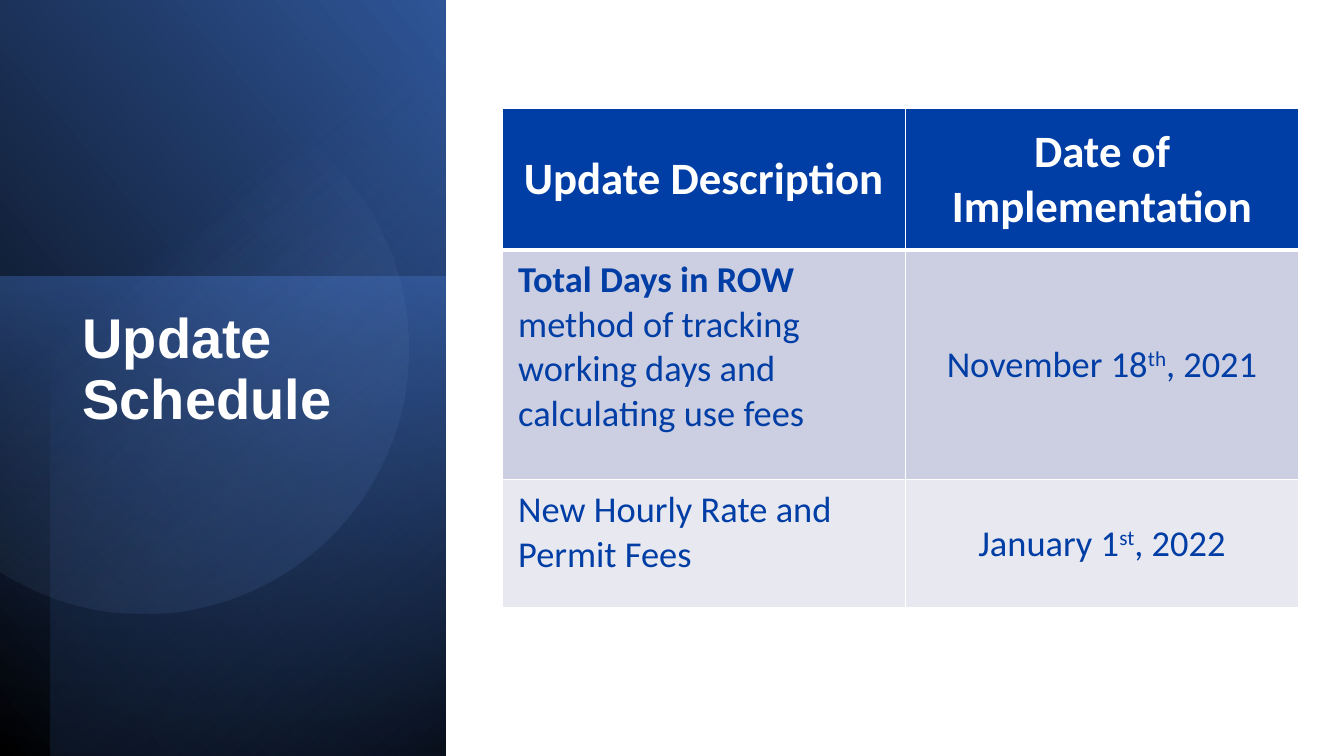
import dataclasses
import math

import lxml.etree
import pptx
import pptx.dml.color
import pptx.enum.shapes
import pptx.enum.text
import pptx.oxml
import pptx.oxml.ns
import pptx.util

Inches = pptx.util.Inches
Pt = pptx.util.Pt
RGBColor = pptx.dml.color.RGBColor
qn = pptx.oxml.ns.qn
CENTER = pptx.enum.text.PP_ALIGN.CENTER
LEFT = pptx.enum.text.PP_ALIGN.LEFT


@dataclasses.dataclass(frozen=True)
class Theme:
    white: str = "FFFFFF"
    black: str = "000000"
    royal: str = "003DA5"
    accent: str = "4472C4"
    accent_dark: str = "2F5597"
    accent_darkest: str = "203864"
    accent_light: str = "8FAADC"
    row_fills: tuple[str, ...] = ("003DA5", "CCCEE1", "E7E8F0")
    title_font: str = "Arial"
    table_font: str = "Calibri"
    title_size: int = 40
    header_size: int = 32
    body_size: int = 26


THEME = Theme()


@dataclasses.dataclass(frozen=True)
class Stop:
    position: int
    color: str
    opacity: int = 100


@dataclasses.dataclass(frozen=True)
class Gradient:
    angle: int
    stops: tuple[Stop, ...]


@dataclasses.dataclass(frozen=True)
class Panel:
    left: float
    top: float
    width: float
    height: float
    rotation: float
    flipped: bool
    gradient: Gradient


@dataclasses.dataclass(frozen=True)
class Piece:
    text: str
    bold: bool = False
    raised: bool = False


@dataclasses.dataclass(frozen=True)
class Cell:
    pieces: tuple[Piece, ...]
    centered: bool = True


PANELS = (
    Panel(-1.55, 1.55, 7.52, 4.42, 90, True, Gradient(
        310, (Stop(0, THEME.black), Stop(100, THEME.accent_dark)))),
    Panel(-0.17, 2.91, 4.76, 4.42, 270, False, Gradient(
        190, (Stop(0, THEME.accent, 50), Stop(100, THEME.accent_darkest, 0)))),
    Panel(-1.29, 1.79, 7.5, 3.92, 270, True, Gradient(
        220, (Stop(0, THEME.black, 59), Stop(69, THEME.accent, 0)))),
)
DISC_GRADIENT = Gradient(310, (Stop(39, THEME.accent_light, 0), Stop(100, THEME.accent_dark, 26)))

COLUMN_WIDTHS = (4, 3.9)
ROW_HEIGHTS = (1.4, 2.28, 1.27)
ROWS = (
    (Cell((Piece("Update Description", bold=True),)),
     Cell((Piece("Date of Implementation", bold=True),))),
    (Cell((Piece("Total Days in ROW ", bold=True),
           Piece("method of tracking working days and calculating use fees")), centered=False),
     Cell((Piece("November 18"), Piece("th", raised=True), Piece(", 2021")))),
    (Cell((Piece("New Hourly Rate and Permit Fees"),), centered=False),
     Cell((Piece("January 1"), Piece("st", raised=True), Piece(", 2022")))),
)


def apply_gradient(shape, gradient: Gradient) -> None:
    """Fill a borderless shape with a gradient that turns with the shape and keeps opacity."""
    shape.shadow.inherit = False
    shape.line.fill.background()
    shape.fill.gradient()
    fill = shape._element.spPr.find(qn("a:gradFill"))
    for child in list(fill):
        fill.remove(child)
    fill.set("rotWithShape", "1")
    stop_list = lxml.etree.SubElement(fill, qn("a:gsLst"))
    for stop in gradient.stops:
        entry = lxml.etree.SubElement(stop_list, qn("a:gs"), pos=str(stop.position * 1000))
        color = lxml.etree.SubElement(entry, qn("a:srgbClr"), val=stop.color)
        if stop.opacity < 100:
            lxml.etree.SubElement(color, qn("a:alpha"), val=str(stop.opacity * 1000))
    lxml.etree.SubElement(fill, qn("a:lin"), ang=str(gradient.angle * 60000), scaled="0")


def add_panel(slide, panel: Panel) -> None:
    shape = slide.shapes.add_shape(
        pptx.enum.shapes.MSO_SHAPE.RECTANGLE, Inches(panel.left), Inches(panel.top),
        Inches(panel.width), Inches(panel.height))
    shape.rotation = panel.rotation
    if panel.flipped:
        shape._element.spPr.find(qn("a:xfrm")).set("flipH", "1")
    apply_gradient(shape, panel.gradient)


def add_disc(slide) -> None:
    """Draw the circle cut by the slide's left edge, as a chord turned into place."""
    center_x, center_y, radius, rotation = 1.81, 3.93, 2.63, 101.6
    half_sweep, steps = 122.9, 120
    points = []
    for step in range(steps + 1):
        angle = math.radians(half_sweep * (2 * step / steps - 1) - rotation)
        points.append((Inches(center_x + radius * math.cos(angle)),
                       Inches(center_y + radius * math.sin(angle))))
    builder = slide.shapes.build_freeform(*points[0])
    builder.add_line_segments(points[1:], close=True)
    shape = builder.convert_to_shape()
    shape.rotation = rotation
    apply_gradient(shape, DISC_GRADIENT)


def add_run(paragraph, piece: Piece, font_name: str, size: int, color: str) -> None:
    run = paragraph.add_run()
    run.text = piece.text
    run.font.name = font_name
    run.font.size = Pt(size)
    run.font.bold = piece.bold
    run.font.color.rgb = RGBColor.from_string(color)
    if piece.raised:
        run._r.get_or_add_rPr().set("baseline", "30000")


def add_title(slide) -> None:
    box = slide.shapes.add_textbox(Inches(0.72), Inches(3.03), Inches(3.15), Inches(3.36))
    box.text_frame.word_wrap = True
    paragraph = box.text_frame.paragraphs[0]
    paragraph.line_spacing = 0.9
    add_run(paragraph, Piece("Update Schedule", bold=True),
            THEME.title_font, THEME.title_size, THEME.white)


def set_borders(cell, top_width: int, bottom_width: int) -> None:
    properties = cell._tc.get_or_add_tcPr()
    sides = (("L", 1), ("R", 1), ("T", top_width), ("B", bottom_width))
    for index, (side, width) in enumerate(sides):
        line = pptx.oxml.parse_xml(
            f'<a:ln{side} xmlns:a="http://schemas.openxmlformats.org/drawingml/2006/main" '
            f'w="{Pt(width)}"><a:solidFill><a:srgbClr val="{THEME.white}"/></a:solidFill>'
            f'</a:ln{side}>')
        properties.insert(index, line)


def add_schedule(slide) -> None:
    table = slide.shapes.add_table(
        len(ROWS), len(COLUMN_WIDTHS), Inches(4.98), Inches(1.08),
        Inches(sum(COLUMN_WIDTHS)), Inches(sum(ROW_HEIGHTS))).table
    table.first_row = False
    table.horz_banding = False
    for column, width in zip(table.columns, COLUMN_WIDTHS):
        column.width = Inches(width)
    for row_index, (row, height) in enumerate(zip(ROWS, ROW_HEIGHTS)):
        table.rows[row_index].height = Inches(height)
        is_header = row_index == 0
        color = THEME.white if is_header else THEME.royal
        size = THEME.header_size if is_header else THEME.body_size
        for column_index, content in enumerate(row):
            cell = table.cell(row_index, column_index)
            cell.fill.solid()
            cell.fill.fore_color.rgb = RGBColor.from_string(THEME.row_fills[row_index])
            cell.margin_left = cell.margin_right = Inches(0.16)
            cell.margin_top = cell.margin_bottom = Inches(0.08)
            anchors = pptx.enum.text.MSO_ANCHOR
            cell.vertical_anchor = anchors.MIDDLE if content.centered else anchors.TOP
            set_borders(cell, 3 if row_index == 1 else 1, 3 if is_header else 1)
            paragraph = cell.text_frame.paragraphs[0]
            paragraph.alignment = CENTER if content.centered else LEFT
            for piece in content.pieces:
                add_run(paragraph, piece, THEME.table_font, size, color)


def main() -> None:
    presentation = pptx.Presentation()
    presentation.slide_width = Inches(13.33)
    presentation.slide_height = Inches(7.5)
    slide = presentation.slides.add_slide(presentation.slide_layouts[6])
    for panel in PANELS:
        add_panel(slide, panel)
    add_disc(slide)
    add_title(slide)
    add_schedule(slide)
    presentation.save("out.pptx")


if __name__ == "__main__":
    main()
